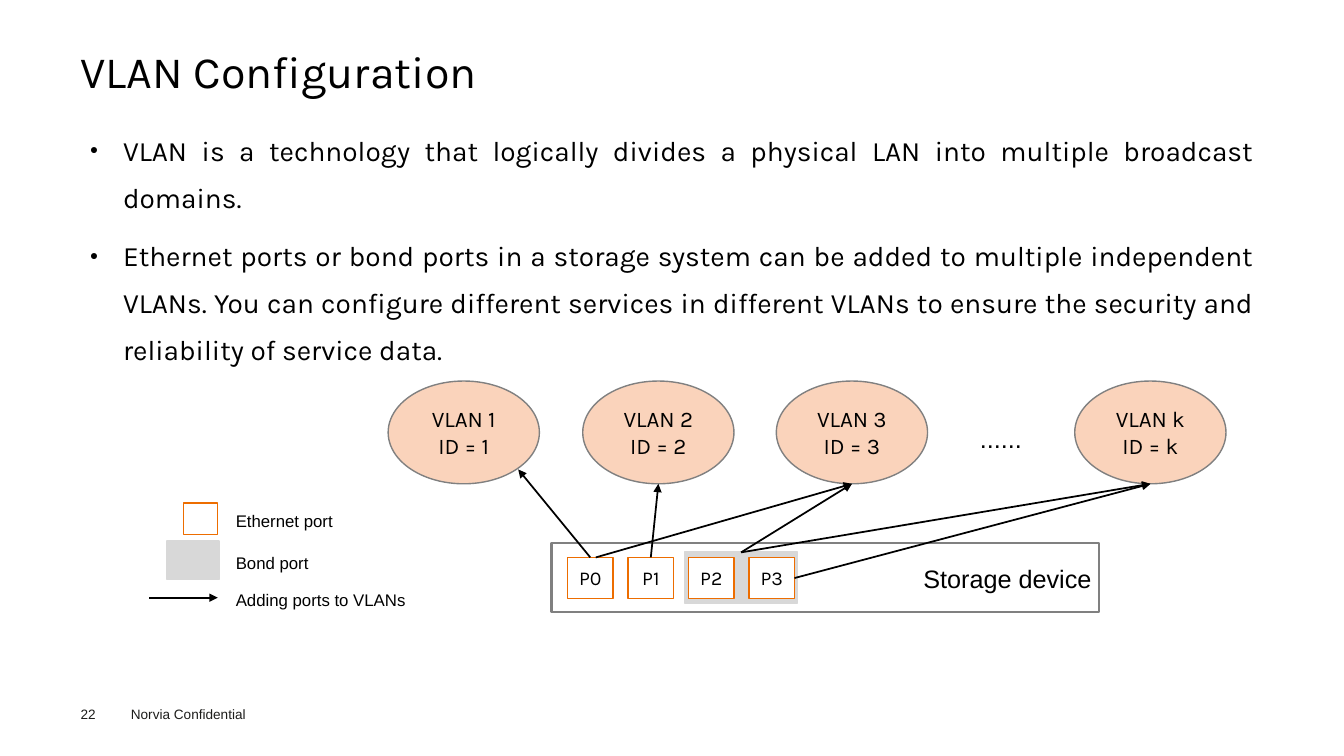
"""Build the VLAN configuration slide."""
from dataclasses import dataclass
from typing import NamedTuple

from lxml.etree import SubElement
from pptx import Presentation
from pptx.dml.color import RGBColor
from pptx.enum.shapes import MSO_CONNECTOR as Conn, MSO_SHAPE as Shp
from pptx.enum.text import MSO_ANCHOR as Anchor, MSO_AUTO_SIZE as Auto, PP_ALIGN as Align
from pptx.oxml.ns import qn
from pptx.util import Inches, Pt


@dataclass(frozen=True)
class Theme:
    """Fonts, colours and type sizes of the slide."""
    head: str = "Karla"
    plain: str = "Arial"
    black: str = "000000"
    footer: str = "1D1D1B"
    white: str = "FFFFFF"
    peach: str = "FAD3BB"
    grey: str = "808080"
    bond: str = "D8D8D8"
    orange: str = "ED6D00"
    title_pt: float = 32
    body_pt: float = 20
    label_pt: float = 18
    vlan_pt: float = 16
    port_pt: float = 14
    legend_pt: float = 12
    footer_pt: float = 9.7


class Box(NamedTuple):
    """Left, top, width and height in inches."""
    x: float
    y: float
    w: float
    h: float

    def at(self, fx: float, fy: float) -> tuple[float, float]:
        """Return the point at the given fractions of the box."""
        return self.x + fx * self.w, self.y + fy * self.h


class Style(NamedTuple):
    """Fill, outline colour and outline width of a shape."""
    fill: str
    line: str
    width: float


class Label(NamedTuple):
    """A free-standing line of text."""
    text: str
    box: Box
    size: float
    color: str
    inset: tuple[float, float]


T = Theme()
VLAN = Style(T.peach, T.grey, 1)
DEVICE = Style(T.white, T.grey, 1.5)
PORT = Style(T.white, T.orange, 1)
BOND = Style(T.bond, T.bond, 1.25)
INSET = (0.1, 0.05)

BULLETS = [
    "VLAN is a technology that logically divides a physical LAN into multiple broadcast domains.",
    "Ethernet ports or bond ports in a storage system can be added to multiple independent VLANs. "
    "You can configure different services in different VLANs to ensure the security and "
    "reliability of service data.",
]
VLANS = {k: Box(x, 3.78, 1.5, 1.02)
         for k, x in zip("123k", (3.85, 5.78, 7.7, 10.66))}
PORTS = [Box(5.63 + 0.6 * i, 5.53, 0.45, 0.41) for i in range(4)]
BOND_BOX = Box(6.79, 5.48, 1.12, 0.5)
LABELS = [
    Label("......", Box(9.62, 4.15, 0.8, 0.34), T.label_pt, T.black, INSET),
    Label("Storage device", Box(9.06, 5.54, 1.95, 0.34), T.label_pt, T.black, INSET),
    Label("Ethernet port", Box(2.24, 5.02, 2, 0.26), T.legend_pt, T.black, INSET),
    Label("Bond port", Box(2.24, 5.43, 2, 0.26), T.legend_pt, T.black, INSET),
    Label("Adding ports to VLANs", Box(2.24, 5.8, 2, 0.26), T.legend_pt, T.black, INSET),
    Label("Norvia Confidential", Box(1.2, 6.95, 1.6, 0.27), T.footer_pt, T.footer, INSET),
    Label("22", Box(0.8, 7, 0.55, 0.16), T.footer_pt, T.footer, (0, 0)),
]


def place(sp, box: Box) -> None:
    """Move and size a shape."""
    sp.left, sp.top, sp.width, sp.height = map(Inches, box)


def write(tf, lines: list[str], *, size: float, font: str = T.head, color: str = T.black,
          align: Align = Align.LEFT, anchor: Anchor = Anchor.TOP,
          inset: tuple[float, float] = (0, 0), spacing: float = 1,
          gap: float = 0, bullet: bool = False) -> None:
    """Fill a text frame with formatted paragraphs."""
    tf.word_wrap, tf.auto_size, tf.vertical_anchor = True, Auto.NONE, anchor
    tf.margin_left = tf.margin_right = Inches(inset[0])
    tf.margin_top = tf.margin_bottom = Inches(inset[1])
    for i, line in enumerate(lines):
        p = tf.add_paragraph() if i else tf.paragraphs[0]
        p.alignment, p.line_spacing = align, spacing
        p.space_before = Pt(gap if i else 0)
        if bullet:
            add_bullet(p)
        r = p.add_run()
        r.text = line
        r.font.size, r.font.name = Pt(size), font
        r.font.color.rgb = RGBColor.from_string(color)


def add_bullet(p) -> None:
    """Give a paragraph a small round bullet and a hanging indent."""
    pr = p._p.get_or_add_pPr()
    pr.set("marL", str(Inches(0.33)))
    pr.set("indent", str(Inches(-0.33)))
    SubElement(pr, qn("a:buSzPct"), val="50000")
    SubElement(pr, qn("a:buFont"), typeface=T.plain)
    SubElement(pr, qn("a:buChar"), char="●")


def add_box(s, kind: Shp, box: Box, style: Style, lines: list[str], size: float = T.port_pt) -> None:
    """Draw a shape with centred text."""
    sp = s.shapes.add_shape(kind, *map(Inches, box))
    sp.shadow.inherit = False
    sp.fill.solid()
    sp.fill.fore_color.rgb = RGBColor.from_string(style.fill)
    sp.line.color.rgb = RGBColor.from_string(style.line)
    sp.line.width = Pt(style.width)
    write(sp.text_frame, lines, size=size, align=Align.CENTER, anchor=Anchor.MIDDLE)


def add_arrow(s, start: tuple[float, float], end: tuple[float, float]) -> None:
    """Draw a straight arrow."""
    c = s.shapes.add_connector(Conn.STRAIGHT, *map(Inches, start + end))
    c.line.color.rgb = RGBColor.from_string(T.black)
    c.line.width = Pt(1.25)
    SubElement(c.line._get_or_add_ln(), qn("a:tailEnd"), type="triangle")
    SubElement(c._element.spPr, qn("a:effectLst"))


def main() -> None:
    """Build and save the slide."""
    prs = Presentation()
    prs.slide_width, prs.slide_height = Inches(13.33), Inches(7.5)
    s = prs.slides.add_slide(prs.slide_layouts[1])
    title, body = s.shapes.title, s.placeholders[1]
    place(title, Box(0.8, 0.49, 11.73, 0.54))
    write(title.text_frame, ["VLAN Configuration"], size=T.title_pt, spacing=0.9)
    place(body, Box(0.8, 1.15, 11.73, 5.33))
    write(body.text_frame, BULLETS, size=T.body_pt, align=Align.JUSTIFY,
          inset=(0.09, 0.04), spacing=1.4, gap=7.9, bullet=True)

    for k, box in VLANS.items():
        add_box(s, Shp.OVAL, box, VLAN, [f"VLAN {k}", f"ID = {k}"], T.vlan_pt)
    add_box(s, Shp.RECTANGLE, Box(5.47, 5.39, 5.43, 0.68), DEVICE, [])
    add_box(s, Shp.RECTANGLE, BOND_BOX, BOND, [])
    for i, box in enumerate(PORTS):
        add_box(s, Shp.RECTANGLE, box, PORT, [f"P{i}"])
    add_box(s, Shp.RECTANGLE, Box(1.82, 4.99, 0.34, 0.31), PORT, [])
    add_box(s, Shp.RECTANGLE, Box(1.66, 5.37, 0.51, 0.38), BOND, [])

    foot = {k: box.at(0.5, 1) for k, box in VLANS.items()}
    bond_top = BOND_BOX.at(0.5, 0)
    links = [
        (PORTS[0].at(0.5, 0), VLANS["1"].at(0.86, 0.86)),
        (PORTS[0].at(0.62, 0), foot["3"]),
        (PORTS[1].at(0.5, 0), foot["2"]),
        (bond_top, foot["3"]),
        (bond_top, foot["k"]),
        (PORTS[3].at(1, 0.5), foot["k"]),
        ((1.48, 5.93), (2.16, 5.93)),
    ]
    for start, end in links:
        add_arrow(s, start, end)

    for lb in LABELS:
        tb = s.shapes.add_textbox(*map(Inches, lb.box))
        write(tb.text_frame, [lb.text], size=lb.size, font=T.plain,
              color=lb.color, inset=lb.inset)
    prs.save("out.pptx")


if __name__ == "__main__":
    main()
